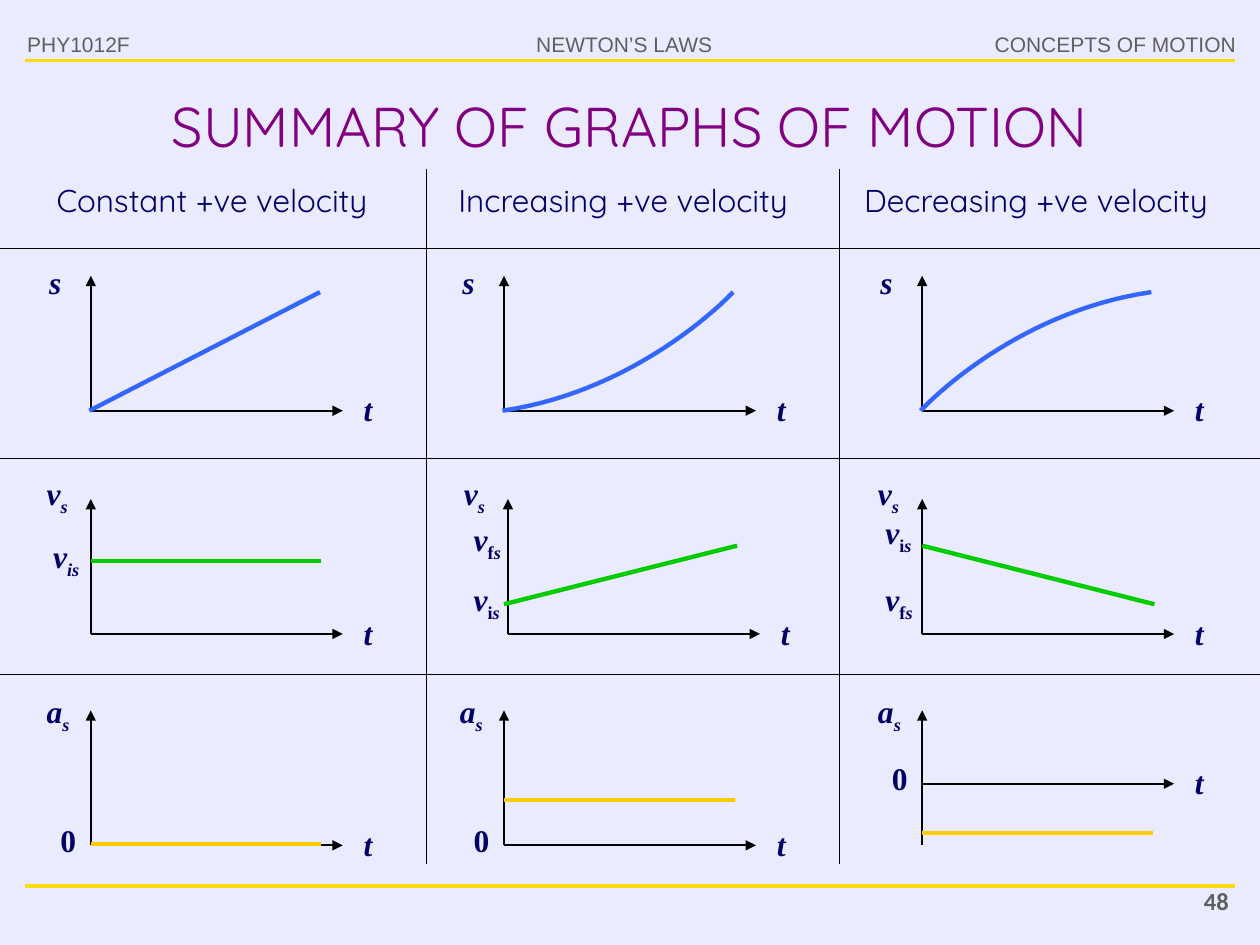
from collections import namedtuple

from lxml import etree
from pptx import Presentation
from pptx import util as u
from pptx.dml.color import RGBColor
from pptx.enum import shapes, text
from pptx.oxml import ns

LAVENDER = RGBColor(0xEB, 0xEB, 0xFF)
YELLOW = RGBColor(0xF8, 0xDC, 0x0E)
GREY = RGBColor(0x5F, 0x5F, 0x5F)
PURPLE = RGBColor(0x80, 0x00, 0x80)
NAVY = RGBColor(0x00, 0x00, 0x66)
BLACK = RGBColor(0x00, 0x00, 0x00)
BLUE = RGBColor(0x33, 0x66, 0xFF)
GREEN = RGBColor(0x00, 0xCC, 0x00)
GOLD = RGBColor(0xFF, 0xCC, 0x00)

Box = namedtuple("Box", "left top width height")
Span = namedtuple("Span", "text italic sub", defaults=(True, False))
Label = namedtuple("Label", "spans left rise")
Graph = namedtuple("Graph", "origin curve ticks zero", defaults=((), 0))
Row = namedtuple("Row", "bottom colour name graphs")

LEFT, CENTRE, RIGHT = text.PP_ALIGN.LEFT, text.PP_ALIGN.CENTER, text.PP_ALIGN.RIGHT
AXIS_WIDTH, AXIS_HEIGHT = 5.08, 2.72
COLUMNS = (1.83, 10.16, 18.59)
V_INITIAL = (Span("v"), Span("i", False, True), Span("s", True, True))
V_FINAL = (Span("v"), Span("f", False, True), Span("s", True, True))
V_CONSTANT = (Span("v"), Span("is", True, True))
ZERO = (Span("0", False),)

ROWS = (
    Row(8.28, BLUE, Label((Span("s"),), -1.6, 3.18), (
        Graph(COLUMNS[0], ((-0.03, 0), (4.62, 2.39))),
        Graph(COLUMNS[1], ((-0.03, 0), (2.79, 0.41), (4.62, 2.39), (4.62, 2.39))),
        Graph(COLUMNS[2], ((-0.03, 0), (-0.03, 0), (1.78, 1.98), (4.62, 2.39))),
    )),
    Row(12.78, GREEN, Label((Span("v"), Span("s", True, True)), -1.65, 3.43), (
        Graph(COLUMNS[0], ((0, 1.47), (4.65, 1.47)), (Label(V_CONSTANT, -1.52, 2.16),)),
        Graph(10.24, ((-0.08, 0.6), (4.62, 1.78)),
              (Label(V_FINAL, -1.45, 2.51), Label(V_INITIAL, -1.45, 1.3))),
        Graph(COLUMNS[2], ((0, 1.78), (4.68, 0.6)),
              (Label(V_INITIAL, -1.5, 2.64), Label(V_FINAL, -1.5, 1.3))),
    )),
    Row(17.04, GOLD, Label((Span("a"), Span("s", True, True)), -1.65, 3.3), (
        Graph(COLUMNS[0], ((0, 0.03), (4.65, 0.03)), (Label(ZERO, -1.37, 0.69),)),
        Graph(COLUMNS[1], ((0, 0.91), (4.65, 0.91)), (Label(ZERO, -1.37, 0.69),)),
        Graph(COLUMNS[2], ((0, 0.25), (4.65, 0.25)), (Label(ZERO, -1.37, 1.93),), 1.24),
    )),
)


def add_text(page, box, spans, size=18, font="Times New Roman", colour=NAVY, bold=False,
             align=LEFT, anchor=text.MSO_ANCHOR.TOP, spacing=1.0, inset=0.25, wrap=True):
    """Add a one-paragraph text box made of the given spans."""
    shape = page.shapes.add_textbox(*map(u.Cm, box))
    frame = shape.text_frame
    frame.word_wrap = wrap
    frame.vertical_anchor = anchor
    frame.margin_left = u.Cm(inset)
    para = frame.paragraphs[0]
    para.alignment = align
    para.line_spacing = spacing
    for span in spans:
        run = para.add_run()
        run.text = span.text
        run.font.size = u.Pt(size)
        run.font.name = font
        run.font.bold = bold
        run.font.italic = span.italic
        run.font.color.rgb = colour
        if span.sub:
            run.font._element.set("baseline", "-25000")


def add_line(page, start, end, colour=BLACK, width=0.5, arrow=False):
    """Add a straight line, with an arrowhead at its end if asked."""
    line = page.shapes.add_connector(
        shapes.MSO_CONNECTOR.STRAIGHT, *map(u.Cm, (*start, *end)))
    line.line.color.rgb = colour
    line.line.width = u.Pt(width)
    if arrow:
        etree.SubElement(line.line._get_or_add_ln(), ns.qn("a:tailEnd"), type="triangle")
    etree.SubElement(line._element.spPr, ns.qn("a:effectLst"))


def add_curve(page, controls, colour, width, steps=32):
    """Add a cubic curve through its four control points."""
    points = []
    for step in range(steps + 1):
        t = step / steps
        weights = ((1 - t) ** 3, 3 * t * (1 - t) ** 2, 3 * t * t * (1 - t), t ** 3)
        points.append(tuple(u.Cm(sum(w * c for w, c in zip(weights, axis)))
                            for axis in zip(*controls)))
    builder = page.shapes.build_freeform(*points[0])
    builder.add_line_segments(points[1:], close=False)
    curve = builder.convert_to_shape()
    curve.shadow.inherit = False
    curve.fill.background()
    curve.line.color.rgb = colour
    curve.line.width = u.Pt(width)


def add_label(page, box, label):
    """Add a symbol placed from the graph's origin."""
    place = Box(box.left + label.left, box.top + box.height - label.rise, 1.65, 1.09)
    add_text(page, place, label.spans, bold=True, spacing=1.1, inset=0.76)


def add_graph(page, box, graph, name, colour):
    """Add axes, symbols and one curve to the box between the axes."""
    bottom = box.top + box.height
    time_axis = bottom - graph.zero
    add_line(page, (box.left, time_axis), (box.left + box.width, time_axis),
             width=1.25, arrow=True)
    add_line(page, (box.left, bottom), (box.left, box.top), width=1.25, arrow=True)
    time = Label((Span("t"),), 4.74, graph.zero + 0.61)
    for label in (time, name, *graph.ticks):
        add_label(page, box, label)
    points = [(box.left + x, bottom - y) for x, y in graph.curve]
    draw = add_line if len(points) == 2 else lambda p, *rest: add_curve(p, rest[:4], *rest[4:])
    draw(page, *points, colour, 2.5)


def add_frame(page, box):
    """Add the running header, the footer and their rules."""
    right = box.left + box.width
    for y in (1.22, 17.86):
        add_line(page, (box.left + 0.51, box.top + y), (right - 0.51, box.top + y), YELLOW, 1.75)
    headers = (("PHY1012F", 0.3, 3.0, LEFT), ("NEWTON’S LAWS", 10.54, 4.09, CENTRE),
               ("CONCEPTS OF MOTION", 19.79, 5.38, RIGHT))
    for words, left, width, align in headers:
        add_text(page, Box(box.left + left, box.top + 0.51, width, 0.78), [Span(words, False)],
                 size=12, font="Arial", colour=GREY, align=align, wrap=False)
    add_text(page, Box(right - 3, box.top + 17.73, 2.62, 0.94), [Span("48", False)],
             size=14, font="Calibri", colour=GREY, bold=True, align=RIGHT)


def add_headings(page, box):
    """Add the title and the three column headings."""
    add_text(page, Box(box.left + 1.27, box.top, box.width - 2.54, 1.83),
             [Span("SUMMARY OF GRAPHS OF MOTION", False)], size=32, font="Quicksand",
             colour=PURPLE, align=CENTRE, anchor=text.MSO_ANCHOR.MIDDLE)
    for word, left in (("Constant", 0.38), ("Increasing", 8.48), ("Decreasing", 16.66)):
        add_text(page, Box(box.left + left, box.top + 1.85, 8.6, 1.19),
                 [Span(word + " +ve velocity", False)], font="Quicksand", spacing=1.1, inset=0.76)


def add_grid(page, box):
    """Add the thin rules between the rows and columns."""
    for y in (1.6, 5.85, 10.19):
        add_line(page, (box.left, box.top + y), (box.left + box.width, box.top + y))
    for x in (8.59, 16.92):
        add_line(page, (box.left + x, box.top), (box.left + x, box.top + box.height))


def main():
    """Build the slide and save the deck."""
    deck = Presentation()
    deck.slide_width, deck.slide_height = u.Cm(25.4), u.Cm(19.05)
    page = deck.slides.add_slide(deck.slide_layouts[6])
    page.background.fill.solid()
    page.background.fill.fore_color.rgb = LAVENDER
    add_frame(page, Box(0, 0, 25.4, 19.05))
    add_headings(page, Box(0, 1.6, 25.4, 3.04))
    add_grid(page, Box(0, 3.4, 25.4, 14.02))
    for row in ROWS:
        for graph in row.graphs:
            box = Box(graph.origin, row.bottom - AXIS_HEIGHT, AXIS_WIDTH, AXIS_HEIGHT)
            add_graph(page, box, graph, row.name, row.colour)
    deck.save("out.pptx")


if __name__ == "__main__":
    main()
